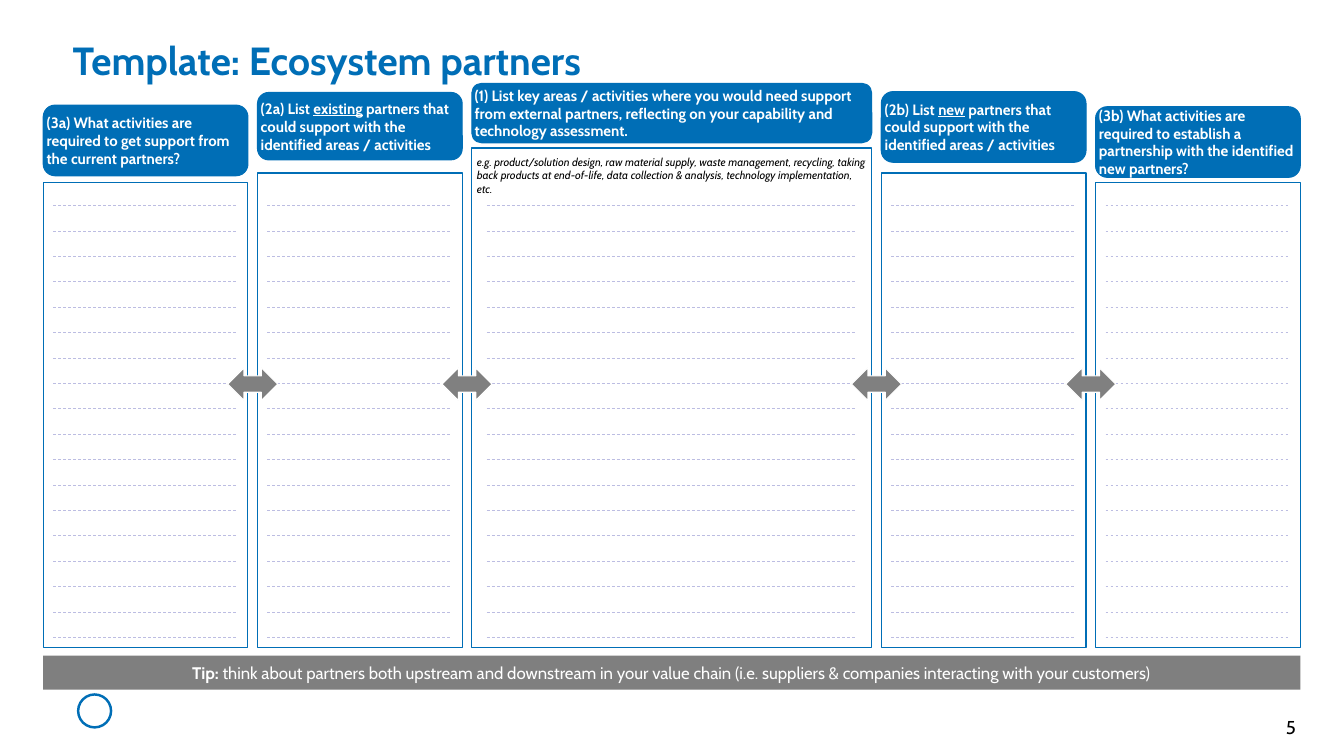
from dataclasses import dataclass

from lxml import etree
from pptx import Presentation
from pptx import util as u
from pptx.dml.color import RGBColor
from pptx.enum import dml, shapes, text
from pptx.oxml.ns import qn


@dataclass(frozen=True)
class Theme:
    font: str = "Cabin"
    blue: str = "006EB6"
    white: str = "FFFFFF"
    black: str = "000000"
    bar: str = "7F7F7F"
    arrow: str = "808080"
    rule: str = "BCBDE2"
    title: float = 28
    number: float = 13.3
    tip: float = 12
    heading: float = 10.7
    example: float = 8


@dataclass(frozen=True)
class Box:
    left: float
    top: float
    width: float
    height: float

    def lengths(self):
        return [u.Cm(side) for side in (self.left, self.top, self.width, self.height)]


THEME = Theme()
KINDS = shapes.MSO_SHAPE
GAP = 0.24
BODY_BOTTOM = 16.32
RULE_TOP, RULE_STEP, RULE_COUNT = 5.18, 0.64, 18
ARROW_WIDTH, ARROW_HEIGHT = 1.26, 0.82
EXAMPLE = ("e.g. product/solution design, raw material supply, waste management, recycling, "
           "taking back products at end-of-life, data collection & analysis, technology "
           "implementation, etc.")

# Each column: width, heading top, heading height, body top, rule inset, heading spans, example
COLUMNS = [
    (5.16, 2.65, 1.78, 4.6, 0.25,
     [("(3a) What activities are required to get support from the current partners?", "b")], ""),
    (5.16, 2.33, 1.7, 4.36, 0.25,
     [("(2a) List ", "b"), ("existing", "bu"),
      (" partners that could support with the identified areas / activities", "b")], ""),
    (10.08, 2.1, 1.5, 3.73, 0.38,
     [("(1) List key areas / activities where you would need support from external partners, "
       "reflecting on your capability and technology assessment.", "b")], EXAMPLE),
    (5.16, 2.31, 1.78, 4.36, 0.25,
     [("(2b) List ", "b"), ("new", "bu"),
      (" partners that could support with the identified areas / activities", "b")], ""),
    (5.16, 2.69, 1.78, 4.6, 0.25,
     [("(3b) What activities are required to establish a partnership with the identified "
       "new partners?", "b")], ""),
]


def write(shape, spans, size, color, align=text.PP_ALIGN.LEFT, anchor=text.MSO_ANCHOR.MIDDLE,
          inset=(0, 0), spacing=None, wrap=True):
    """Fill a shape with spans of (words, style), where style holds b, i or u."""
    frame = shape.text_frame
    frame.word_wrap = wrap
    frame.vertical_anchor = anchor
    frame.margin_left = frame.margin_right = u.Cm(inset[0])
    frame.margin_top = frame.margin_bottom = u.Cm(inset[1])
    para = frame.paragraphs[0]
    para.alignment = align
    para.line_spacing = spacing
    for words, style in spans:
        span = para.add_run()
        span.text = words
        span.font.name = THEME.font
        span.font.size = u.Pt(size)
        span.font.color.rgb = RGBColor.from_string(color)
        span.font.bold = "b" in style
        span.font.italic = "i" in style
        span.font.underline = "u" in style


def add_block(page, kind, box, fill=None, line=None, weight=0.75):
    block = page.shapes.add_shape(kind, *box.lengths())
    block.shadow.inherit = False
    if fill:
        block.fill.solid()
        block.fill.fore_color.rgb = RGBColor.from_string(fill)
    else:
        block.fill.background()
    if line:
        block.line.color.rgb = RGBColor.from_string(line)
        block.line.width = u.Pt(weight)
    else:
        block.line.fill.background()
    return block


def add_rule(page, left, right, level):
    rule = page.shapes.add_connector(shapes.MSO_CONNECTOR.STRAIGHT, u.Cm(left), u.Cm(level),
                                     u.Cm(right), u.Cm(level))
    rule.line.color.rgb = RGBColor.from_string(THEME.rule)
    rule.line.width = u.Pt(0.5)
    rule.line.dash_style = dml.MSO_LINE.DASH
    etree.SubElement(rule._element.spPr, qn("a:effectLst"))


def add_title(page, box):
    title = page.shapes.add_textbox(*box.lengths())
    write(title, [("Template: Ecosystem partners", "b")], THEME.title, THEME.blue,
          anchor=text.MSO_ANCHOR.TOP, spacing=0.87)


def add_column(page, box, heading_height, body_top, rule_inset, spans, example):
    # Heading
    heading = add_block(page, KINDS.ROUNDED_RECTANGLE,
                        Box(box.left, box.top, box.width, heading_height),
                        THEME.blue, THEME.blue)
    write(heading, spans, THEME.heading, THEME.white, inset=(0, 0.18))
    # Writing area
    body = add_block(page, KINDS.RECTANGLE,
                     Box(box.left, body_top, box.width, box.top + box.height - body_top),
                     THEME.white, THEME.blue)
    if example:
        write(body, [(example, "i")], THEME.example, THEME.black,
              anchor=text.MSO_ANCHOR.TOP, inset=(0.13, 0.18))
    for row in range(RULE_COUNT):
        add_rule(page, box.left + rule_inset, box.left + box.width - rule_inset,
                 RULE_TOP + row * RULE_STEP)


def add_board(page, box):
    left = box.left
    gap_centers = []
    for width, top, heading_height, body_top, rule_inset, spans, example in COLUMNS:
        add_column(page, Box(left, top, width, box.top + box.height - top),
                   heading_height, body_top, rule_inset, spans, example)
        left += width + GAP
        gap_centers.append(left - GAP / 2)
    # Arrows between neighbouring columns
    for center in gap_centers[:-1]:
        add_block(page, KINDS.LEFT_RIGHT_ARROW,
                  Box(center - ARROW_WIDTH / 2, 9.27, ARROW_WIDTH, ARROW_HEIGHT),
                  THEME.arrow, THEME.white)


def add_tip(page, box):
    tip = add_block(page, KINDS.RECTANGLE, box, THEME.bar)
    write(tip, [("Tip: ", "b"),
                ("think about partners both upstream and downstream in your value chain "
                 "(i.e. suppliers & companies interacting with your customers)", "")],
          THEME.tip, THEME.white, align=text.PP_ALIGN.CENTER, inset=(0.13, 0.18))


def add_footer(page, box):
    # Plain ring as emblem
    add_block(page, KINDS.OVAL, Box(box.left + 0.03, box.top + 0.03, 0.83, 0.83),
              line=THEME.blue, weight=1.75)
    # Page number
    number = page.shapes.add_textbox(
        *Box(box.left + box.width - 0.58, box.top + 0.56, 0.58, 0.56).lengths())
    write(number, [("5", "")], THEME.number, THEME.black,
          align=text.PP_ALIGN.RIGHT, wrap=False)


def main():
    deck = Presentation()
    deck.slide_width, deck.slide_height = u.Cm(33.87), u.Cm(19.05)
    page = deck.slides.add_slide(deck.slide_layouts[6])
    add_footer(page, Box(1.94, 17.47, 30.72, 1.12))
    add_title(page, Box(1.83, 1.09, 30.1, 2.44))
    add_board(page, Box(1.09, 2.1, 31.68, BODY_BOTTOM - 2.1))
    add_tip(page, Box(1.09, 16.52, 31.68, 0.86))
    deck.save("out.pptx")


if __name__ == "__main__":
    main()
